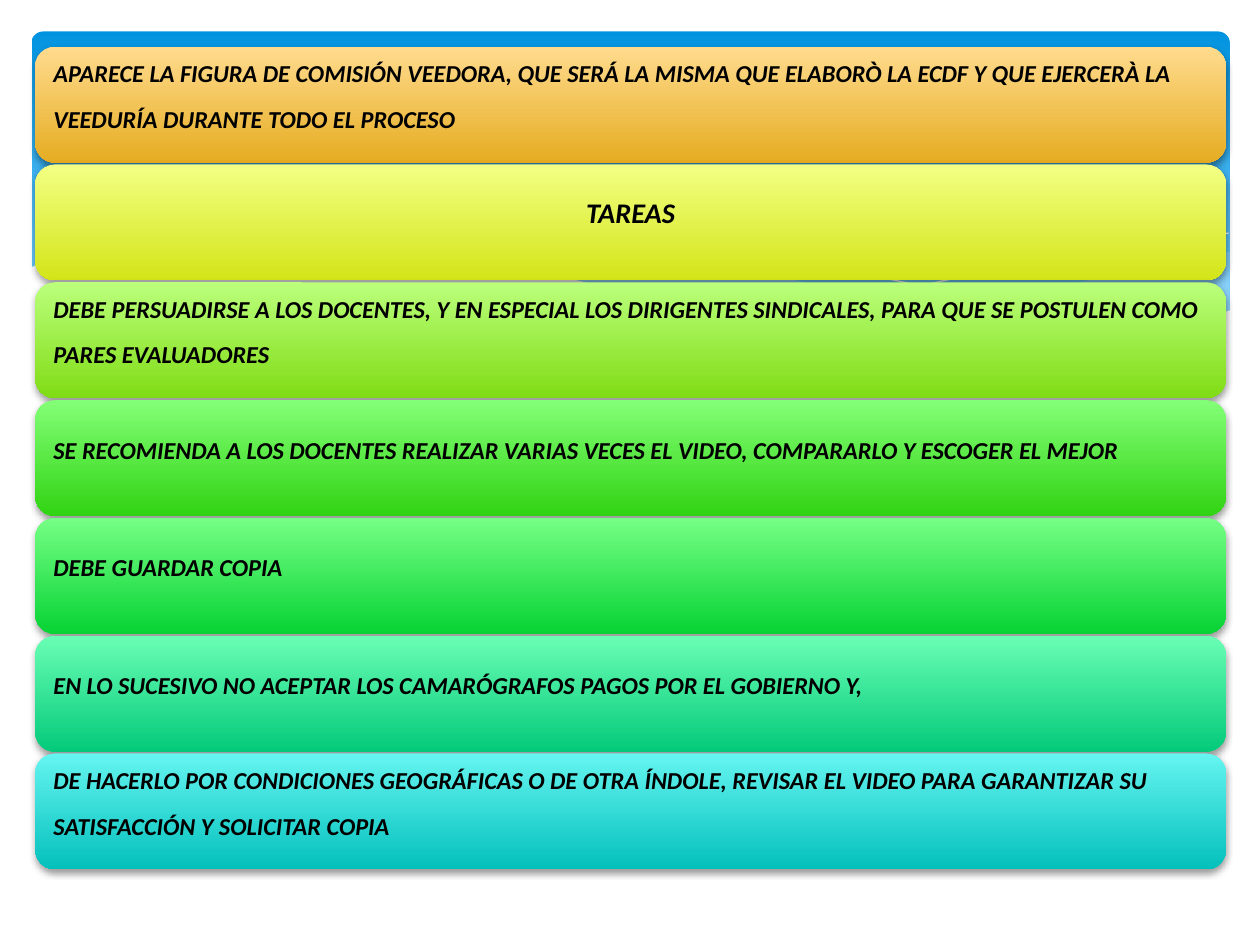
from lxml import etree
from pptx import Presentation, util as u
from pptx.dml.color import RGBColor
from pptx.enum import shapes, text
from pptx.oxml import parse_xml
from pptx.oxml.ns import nsdecls, qn

W, H = 10, 7.5
# text, top colour, bottom colour
BARS = [
    ("APARECE LA FIGURA DE COMISIÓN VEEDORA, QUE SERÁ LA MISMA QUE ELABORÒ LA ECDF "
     "Y QUE EJERCERÀ LA VEEDURÍA DURANTE TODO EL PROCESO", "FFDB8E", "E6AD22"),
    ("TAREAS", "F3FF84", "D3E518"),
    ("DEBE PERSUADIRSE A LOS DOCENTES, Y EN ESPECIAL LOS DIRIGENTES SINDICALES, "
     "PARA QUE SE POSTULEN COMO PARES EVALUADORES", "BBFF7C", "80DC15"),
    ("SE RECOMIENDA A LOS DOCENTES REALIZAR VARIAS VECES EL VIDEO, COMPARARLO "
     "Y ESCOGER EL MEJOR", "83FF77", "31D313"),
    ("DEBE GUARDAR COPIA", "76FF85", "07D334"),
    ("EN LO SUCESIVO NO ACEPTAR LOS CAMARÓGRAFOS PAGOS POR EL GOBIERNO Y,",
     "69FEB4", "05CA7B"),
    ("DE HACERLO POR CONDICIONES GEOGRÁFICAS O DE OTRA ÍNDOLE, REVISAR EL VIDEO "
     "PARA GARANTIZAR SU SATISFACCIÓN Y SOLICITAR COPIA", "65F5F1", "04C0BB"),
]
HEADING = "TAREAS"
BAR_LEFT, BAR_TOP, BAR_W, BAR_H, PITCH = 0.28, 0.37, 9.45, 0.92, 0.935

# Waves, in hundredths of an inch: points, fill, opacity in %; no fill means an open line
WAVES = [
    ([(975, 200), (935, 207), (861, 223), (779, 242), (706, 257), (661, 265), (705, 271),
      (757, 276), (814, 278), (863, 275), (913, 267), (949, 257), (976, 247), (976, 200)],
     "C6E7FC", 29),
    ([(893, 273), (837, 265), (775, 254), (706, 240), (629, 222), (569, 208), (514, 198),
      (465, 191), (420, 187), (361, 185), (313, 188), (286, 191), (342, 199), (404, 211),
      (449, 222), (530, 240), (601, 255), (665, 266), (722, 274), (773, 277), (828, 278),
      (867, 276)], "C6E7FC", 40),
    ([(309, 195), (344, 190), (401, 187), (469, 189), (533, 194), (608, 204), (665, 213),
      (727, 226), (795, 241), (869, 261), (907, 272)], None, 100),
    ([(613, 257), (672, 241), (748, 223), (806, 210), (866, 199), (924, 190), (975, 185)],
     None, 100),
    ([(977, 246), (940, 259), (899, 269), (850, 275), (809, 277), (761, 275), (708, 270),
      (648, 262), (579, 250), (503, 233), (447, 220), (391, 207), (340, 197), (292, 190),
      (250, 186), (193, 184), (146, 185), (106, 189), (76, 195), (52, 201), (36, 207),
      (23, 213), (23, 329), (977, 329)], "FFFFFF", 100),
]


def rgb(value):
    return RGBColor.from_string(value)


def add_gradient_bar(slide, left, top, width, height, stops, radius):
    sp = slide.shapes.add_shape(shapes.MSO_SHAPE.ROUNDED_RECTANGLE,
                                *map(u.Inches, (left, top, width, height)))
    sp.adjustments[0] = radius
    sp.shadow.inherit = False
    sp.line.fill.background()
    sp.fill.gradient()
    sp.fill.gradient_angle = 270
    for stop, (position, colour) in zip(sp.fill.gradient_stops, stops):
        stop.position = position
        stop.color.rgb = rgb(colour)
    return sp


def add_wave(slide, points, fill, opacity):
    builder = slide.shapes.build_freeform(*points[0], scale=u.Inches(0.01))
    builder.add_line_segments(points[1:], close=fill is not None)
    sp = builder.convert_to_shape()
    sp.shadow.inherit = False
    if fill is None:
        sp.fill.background()
        sp.line.color.rgb = rgb("FFFFFF")
        sp.line.width = 0
        return
    sp.line.fill.background()
    sp.fill.solid()
    sp.fill.fore_color.rgb = rgb(fill)
    if opacity < 100:
        colour = sp._element.spPr.find(".//" + qn("a:srgbClr"))
        etree.SubElement(colour, qn("a:alpha"), val=str(opacity * 1000))


def add_shadow(sp):
    effects = sp._element.spPr.find(qn("a:effectLst"))
    effects.append(parse_xml(
        f'<a:outerShdw {nsdecls("a")} blurRad="{u.Pt(4)}" dist="{u.Pt(2)}" dir="5400000" '
        'rotWithShape="0"><a:srgbClr val="000000"><a:alpha val="38000"/></a:srgbClr>'
        '</a:outerShdw>'))


def write(sp, words, size, inset, align):
    tf = sp.text_frame
    tf.word_wrap = True
    tf.vertical_anchor = text.MSO_ANCHOR.MIDDLE
    tf.margin_left = tf.margin_right = tf.margin_top = tf.margin_bottom = u.Inches(inset)
    p = tf.paragraphs[0]
    p.alignment = align
    p.line_spacing = 0.9
    p.space_after = u.Pt(0)
    after = p._p.pPr.find(qn("a:spcAft"))
    after.remove(after[0])
    etree.SubElement(after, qn("a:spcPct"), val="35000")
    r = p.add_run()
    r.text = words
    font = r.font
    font.name, font.size, font.bold, font.italic = "Calibri", u.Pt(size), True, True
    font.color.rgb = rgb("000000")
    r._r.get_or_add_rPr().set("baseline", "30000")


def main():
    prs = Presentation()
    prs.slide_width, prs.slide_height = u.Inches(W), u.Inches(H)
    slide = prs.slides.add_slide(prs.slide_layouts[6])

    add_gradient_bar(slide, 0.25, 0.25, 9.51, 2.7, [(0, "0293E0"), (0.9, "83D3FE")], 0.034)
    for wave in WAVES:
        add_wave(slide, *wave)

    for i, (words, top_colour, bottom_colour) in enumerate(BARS):
        sp = add_gradient_bar(slide, BAR_LEFT, BAR_TOP + i * PITCH, BAR_W, BAR_H,
                              [(0, top_colour), (1, bottom_colour)], 0.17)
        add_shadow(sp)
        if words == HEADING:
            write(sp, words, 28, 0.12, text.PP_ALIGN.CENTER)
        else:
            write(sp, words, 24, 0.1, text.PP_ALIGN.LEFT)

    prs.save("out.pptx")


if __name__ == "__main__":
    main()
